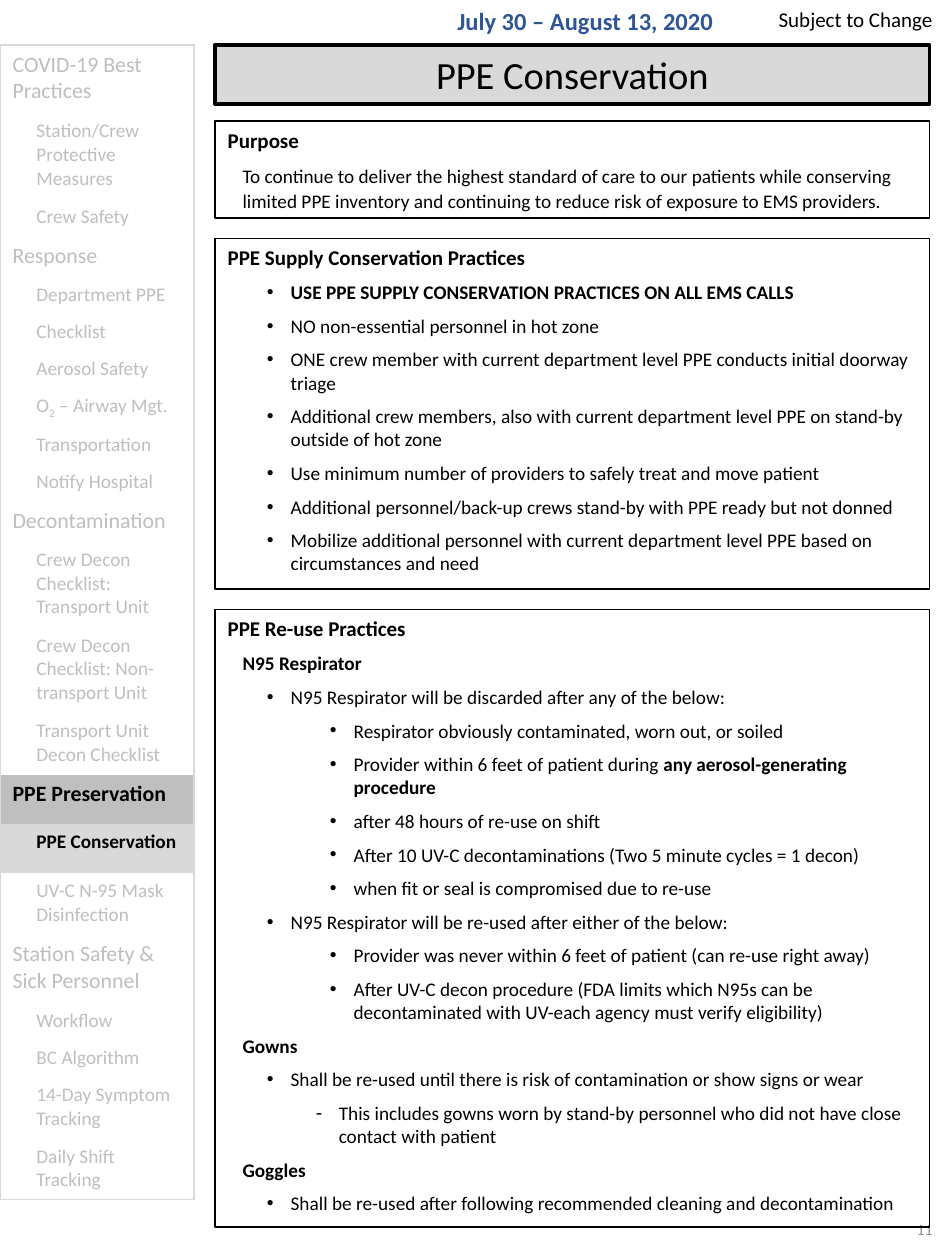
from dataclasses import dataclass

from lxml import etree
from pptx import Presentation
from pptx.dml.color import RGBColor
from pptx.enum.shapes import MSO_SHAPE
from pptx.enum.text import MSO_ANCHOR, MSO_AUTO_SIZE, PP_ALIGN
from pptx.oxml.ns import qn
from pptx.util import Cm, Pt

RECT = MSO_SHAPE.RECTANGLE
LEFT, MID, RIGHT = PP_ALIGN.LEFT, PP_ALIGN.CENTER, PP_ALIGN.RIGHT
TOP, MIDDLE = MSO_ANCHOR.TOP, MSO_ANCHOR.MIDDLE
GROW, FIXED = MSO_AUTO_SIZE.SHAPE_TO_FIT_TEXT, MSO_AUTO_SIZE.NONE
PLAIN = "{2D5ABB26-0587-4C30-8999-92F81FD0307C}"  # table style without grid


@dataclass(frozen=True)
class Theme:
    font: str = "Calibri"
    black: str = "000000"
    blue: str = "2F5597"
    gray: str = "8C8C8C"
    faded: str = "BFBFBF"
    pale: str = "D9D9D9"
    title: float = 22
    date: float = 14
    group: float = 12.5
    head: float = 12
    body: float = 11
    small: float = 9


T = Theme()


def add_run(para, text, size, color=T.black, bold=False):
    run = para.add_run()
    run.text = text
    font = run.font
    font.name, font.size, font.bold = T.font, Pt(size), bold
    font.color.rgb = RGBColor.from_string(color)
    return run


def indent(para, left, hang=0, mark=None):
    """Set the left indent and the hanging bullet, in cm."""
    props = para._p.get_or_add_pPr()
    props.set("marL", str(Cm(left)))
    props.set("indent", str(Cm(-hang)))
    if mark:
        etree.SubElement(props, qn("a:buFont")).set("typeface", "Arial")
        etree.SubElement(props, qn("a:buChar")).set("char", mark)


prs = Presentation()
prs.slide_width, prs.slide_height = Cm(19.05), Cm(25.4)
slide = prs.slides.add_slide(prs.slide_layouts[6])
shapes = slide.shapes

# Page number, date and notice
for text, x, y, w, h, size, color, bold, align, anchor, fit in (
    ("11", 14.76, 24.1, 4.29, 1.35, T.small, T.gray, False, RIGHT, MIDDLE, FIXED),
    ("July 30 – August 13, 2020", 8.97, 0, 5.79, 1.45, T.date, T.blue, True, LEFT, TOP, GROW),
    ("Subject to Change", 14.76, 0, 4.29, 0.77, T.head, T.black, False, RIGHT, TOP, GROW),
):
    frame = shapes.add_textbox(Cm(x), Cm(y), Cm(w), Cm(h)).text_frame
    frame.word_wrap, frame.auto_size = True, fit
    frame.vertical_anchor = anchor
    para = frame.paragraphs[0]
    para.alignment = align
    add_run(para, text, size, color, bold)

# Sidebar: group rows, then item rows by line count
GROUP, ITEM = "group", "item"
HIGH = {GROUP: (0.81, 1.37), ITEM: (0.75, 1.24, 1.73)}
ACTIVE = {"PPE Preservation": T.faded, "PPE Conservation": T.pale}
menu = (
    (GROUP, 2, "COVID-19 Best Practices"),
    (ITEM, 3, "Station/Crew Protective Measures"),
    (ITEM, 1, "Crew Safety"),
    (GROUP, 1, "Response"),
    (ITEM, 1, "Department PPE"),
    (ITEM, 1, "Checklist"),
    (ITEM, 1, "Aerosol Safety"),
    (ITEM, 1, "O|2| – Airway Mgt."),
    (ITEM, 1, "Transportation"),
    (ITEM, 1, "Notify Hospital"),
    (GROUP, 1, "Decontamination"),
    (ITEM, 3, "Crew Decon Checklist: Transport Unit"),
    (ITEM, 3, "Crew Decon Checklist: Non-transport Unit"),
    (ITEM, 2, "Transport Unit Decon Checklist"),
    (GROUP, 1, "PPE Preservation"),
    (ITEM, 1, "PPE Conservation"),
    (ITEM, 2, "UV-C N-95 Mask Disinfection"),
    (GROUP, 2, "Station Safety & Sick Personnel"),
    (ITEM, 1, "Workflow"),
    (ITEM, 1, "BC Algorithm"),
    (ITEM, 2, "14-Day Symptom Tracking"),
    (ITEM, 2, "Daily Shift Tracking"),
)
table = shapes.add_table(len(menu), 1, 0, Cm(0.91), Cm(3.91), Cm(23.2)).table
table.first_row = table.horz_banding = False
table._tbl.tblPr.find(qn("a:tableStyleId")).text = PLAIN
table.columns[0].width = Cm(3.91)
for i, (kind, lines, text) in enumerate(menu):
    live = text in ACTIVE
    table.rows[i].height = Cm(0.99 if live else HIGH[kind][lines - 1])
    cell = table.cell(i, 0)
    para = cell.text_frame.paragraphs[0]
    if kind == ITEM:
        indent(para, 0.48)
    size = T.group if kind == GROUP else T.body
    for n, part in enumerate(text.split("|")):
        run = add_run(para, part, size, T.black if live else T.faded, live)
        if n == 1:
            run.font._element.set("baseline", "-25000")
    sides = ["lnL", "lnR"]
    if i == 0:
        sides.append("lnT")
    if i == len(menu) - 1:
        sides.append("lnB")
    props = cell._tc.get_or_add_tcPr()
    for side in sides:
        line = etree.SubElement(props, qn("a:" + side), w=str(Pt(1)))
        paint = etree.SubElement(line, qn("a:solidFill"))
        etree.SubElement(paint, qn("a:srgbClr"), val=T.pale)
    if live:
        cell.fill.solid()
        cell.fill.fore_color.rgb = RGBColor.from_string(ACTIVE[text])
    else:
        cell.fill.background()

# Panels: style gives level, left, hang, mark, size, bold; | toggles bold
STYLES = {
    "title": (0, 0, 0, None, T.title, False),
    "head": (0, 0, 0, None, T.head, True),
    "text": (0, 0.3, 0, None, T.body, False),
    "sub": (0, 0.3, 0, None, T.body, True),
    "dot": (0, 1.27, 0.48, "•", T.body, False),
    "deep": (1, 2.54, 0.48, "•", T.body, False),
    "dash": (1, 2.24, 0.46, "-", T.body, False),
}
panels = (
    (0.91, 1.19, (("title", "PPE Conservation"),)),
    (2.44, 1.96, (
        ("head", "Purpose"),
        ("text", "To continue to deliver the highest standard of care to our patients while conserving limited PPE inventory and continuing to reduce risk of exposure to EMS providers."),
    )),
    (4.81, 7.06, (
        ("head", "PPE Supply Conservation Practices"),
        ("dot", "|USE PPE SUPPLY CONSERVATION PRACTICES ON ALL EMS CALLS"),
        ("dot", "NO non-essential personnel in hot zone"),
        ("dot", "ONE crew member with current department level PPE conducts initial doorway triage"),
        ("dot", "Additional crew members, also with current department level PPE on stand-by outside of hot zone"),
        ("dot", "Use minimum number of providers to safely treat and move patient"),
        ("dot", "Additional personnel/back-up crews stand-by with PPE ready but not donned"),
        ("dot", "Mobilize additional personnel with current department level PPE based on circumstances and need"),
    )),
    (12.29, 12.45, (
        ("head", "PPE Re-use Practices"),
        ("sub", "N95 Respirator"),
        ("dot", "N95 Respirator will be discarded after any of the below:"),
        ("deep", "Respirator obviously contaminated, worn out, or soiled"),
        ("deep", "Provider within 6 feet of patient during |any aerosol-generating procedure"),
        ("deep", "after 48 hours of re-use on shift"),
        ("deep", "After 10 UV-C decontaminations (Two 5 minute cycles = 1 decon)"),
        ("deep", "when fit or seal is compromised due to re-use"),
        ("dot", "N95 Respirator will be re-used after either of the below:"),
        ("deep", "Provider was never within 6 feet of patient (can re-use right away)"),
        ("deep", "After UV-C decon procedure (FDA limits which N95s can be decontaminated with UV-each agency must verify eligibility)"),
        ("sub", "Gowns"),
        ("dot", "Shall be re-used until there is risk of contamination or show signs or wear"),
        ("dash", "This includes gowns worn by stand-by personnel who did not have close contact with patient"),
        ("sub", "Goggles"),
        ("dot", "Shall be re-used after following recommended cleaning and decontamination"),
    )),
)
for y, h, rows in panels:
    box = shapes.add_shape(RECT, Cm(4.34), Cm(y), Cm(14.4), Cm(h))
    box.shadow.inherit = False
    title = rows[0][0] == "title"
    if title:
        box.fill.solid()
        box.fill.fore_color.rgb = RGBColor.from_string(T.pale)
    else:
        box.fill.background()
    box.line.color.rgb = RGBColor.from_string(T.black)
    box.line.width = Pt(2.25 if title else 1)
    frame = box.text_frame
    frame.word_wrap, frame.auto_size = True, GROW
    frame.vertical_anchor = TOP
    for i, (style, text) in enumerate(rows):
        level, left, hang, mark, size, bold = STYLES[style]
        para = frame.add_paragraph() if i else frame.paragraphs[0]
        para.alignment = MID if title else LEFT
        para.level = level
        if i:
            para.space_before = Pt(6)
        if style == "text":
            para.line_spacing = Pt(14.2)
        indent(para, left, hang, mark)
        for n, part in enumerate(text.split("|")):
            if part:
                add_run(para, part, size, bold=bold or n == 1)

prs.save("out.pptx")
